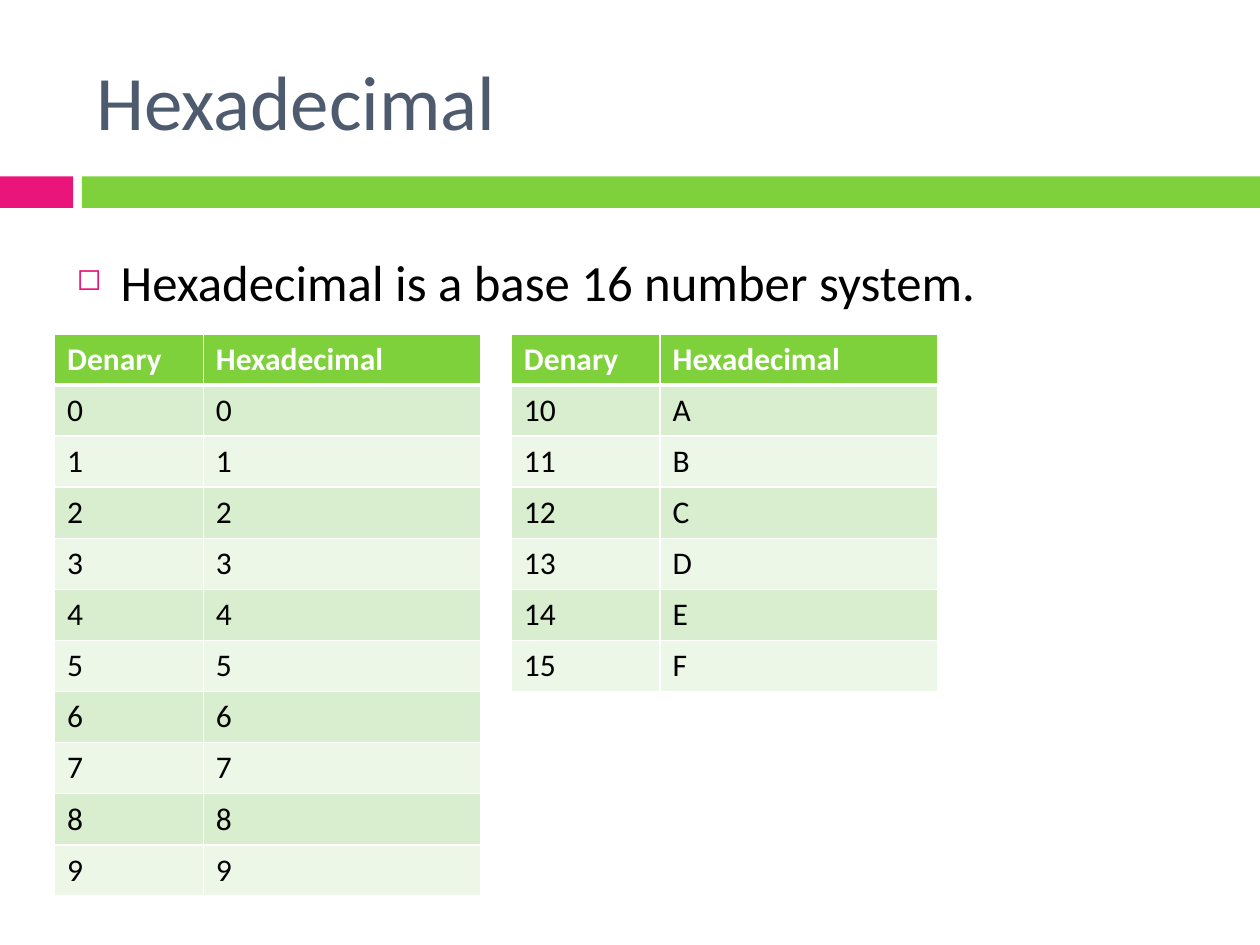
from lxml.etree import SubElement
from pptx import Presentation
from pptx.dml.color import RGBColor
from pptx.enum.shapes import MSO_SHAPE
from pptx.enum.text import MSO_ANCHOR
from pptx.oxml.ns import qn
from pptx.util import Pt

COLORS = {
    "pink": "EA157A", "green": "7FD13B", "slate": "4E5B6F",
    "black": "000000", "white": "FFFFFF",
    "band_dark": "D8EECE", "band_light": "ECF7E8",
}
FONT = "Calibri"

TITLE = "Hexadecimal"
STATEMENT = "Hexadecimal is a base 16 number system."
HEADER = ("Denary", "Hexadecimal")
DIGITS = [(str(number), f"{number:X}") for number in range(16)]
TABLES = [DIGITS[:10], DIGITS[10:]]

# left, top, width, height in points
BARS = [
    ("pink", (0, 100.8, 41.8, 18)),
    ("green", (46.8, 100.8, 673.2, 18)),
]
TITLE_BOX = (48, 18, 642, 78)
STATEMENT_BOX = (36.7, 139.7, 648, 364.3)
TABLE_LEFT, TABLE_TOP, TABLE_STEP = 31.2, 190.8, 261
COLUMN_WIDTHS = (85, 158.7)
ROW_HEIGHT = 29.2


def rgb(name):
    return RGBColor.from_string(COLORS[name])


def points(values):
    return [Pt(value) for value in values]


def write(frame, text, size, color, bold=False):
    para = frame.paragraphs[0]
    span = para.add_run()
    span.text = text
    formats = {"name": FONT, "size": Pt(size), "bold": bold}
    for attribute, value in formats.items():
        setattr(span.font, attribute, value)
    span.font.color.rgb = rgb(color)
    return para


def add_bar(page, color, place):
    bar = page.shapes.add_shape(MSO_SHAPE.RECTANGLE, *points(place))
    bar.shadow.inherit = False
    bar.fill.solid()
    bar.fill.fore_color.rgb = rgb(color)
    bar.line.fill.background()


def add_text(page, place, text, size, color, anchor):
    box = page.shapes.add_textbox(*points(place))
    box.text_frame.word_wrap = True
    box.text_frame.vertical_anchor = anchor
    return write(box.text_frame, text, size, color)


def add_bullet(para):
    para.space_before = Pt(7)
    properties = para._p.get_or_add_pPr()
    properties.set("marL", str(Pt(25.2)))
    properties.set("indent", str(-Pt(25.2)))
    bullet_color = SubElement(properties, qn("a:buClr"))
    SubElement(bullet_color, qn("a:srgbClr"), val=COLORS["pink"])
    SubElement(properties, qn("a:buSzPct"), val="60000")
    SubElement(properties, qn("a:buChar"), char="◻")


def set_borders(cell, widths):
    """Draw white borders; widths maps a side (L, R, T, B) to points."""
    properties = cell._tc.get_or_add_tcPr()
    for side, width in widths.items():
        line = SubElement(properties, qn(f"a:ln{side}"), w=str(Pt(width)))
        fill = SubElement(line, qn("a:solidFill"))
        SubElement(fill, qn("a:srgbClr"), val=COLORS["white"])


def add_digit_table(page, left, digits):
    rows = [HEADER, *digits]
    table = page.shapes.add_table(
        len(rows), len(HEADER), Pt(left), Pt(TABLE_TOP),
        Pt(sum(COLUMN_WIDTHS)), Pt(ROW_HEIGHT * len(rows))).table
    for column, width in zip(table.columns, COLUMN_WIDTHS):
        column.width = Pt(width)
    for index, values in enumerate(rows):
        table.rows[index].height = Pt(ROW_HEIGHT)
        is_header = index == 0
        band = "band_dark" if index % 2 else "band_light"
        borders = {"L": 1, "R": 1, "T": 3 if index == 1 else 1,
                   "B": 3 if is_header else 1}
        for cell, text in zip(table.rows[index].cells, values):
            set_borders(cell, borders)
            cell.fill.solid()
            cell.fill.fore_color.rgb = rgb("green" if is_header else band)
            write(cell.text_frame, text, 18,
                  "white" if is_header else "black", is_header)


def main():
    deck = Presentation()
    deck.slide_width, deck.slide_height = Pt(720), Pt(540)
    page = deck.slides.add_slide(deck.slide_layouts[6])
    for color, place in BARS:
        add_bar(page, color, place)
    add_text(page, TITLE_BOX, TITLE, 44, "slate", MSO_ANCHOR.MIDDLE)
    add_bullet(add_text(page, STATEMENT_BOX, STATEMENT, 29, "black",
                        MSO_ANCHOR.TOP))
    for index, digits in enumerate(TABLES):
        add_digit_table(page, TABLE_LEFT + index * TABLE_STEP, digits)
    deck.save("out.pptx")


if __name__ == "__main__":
    main()
